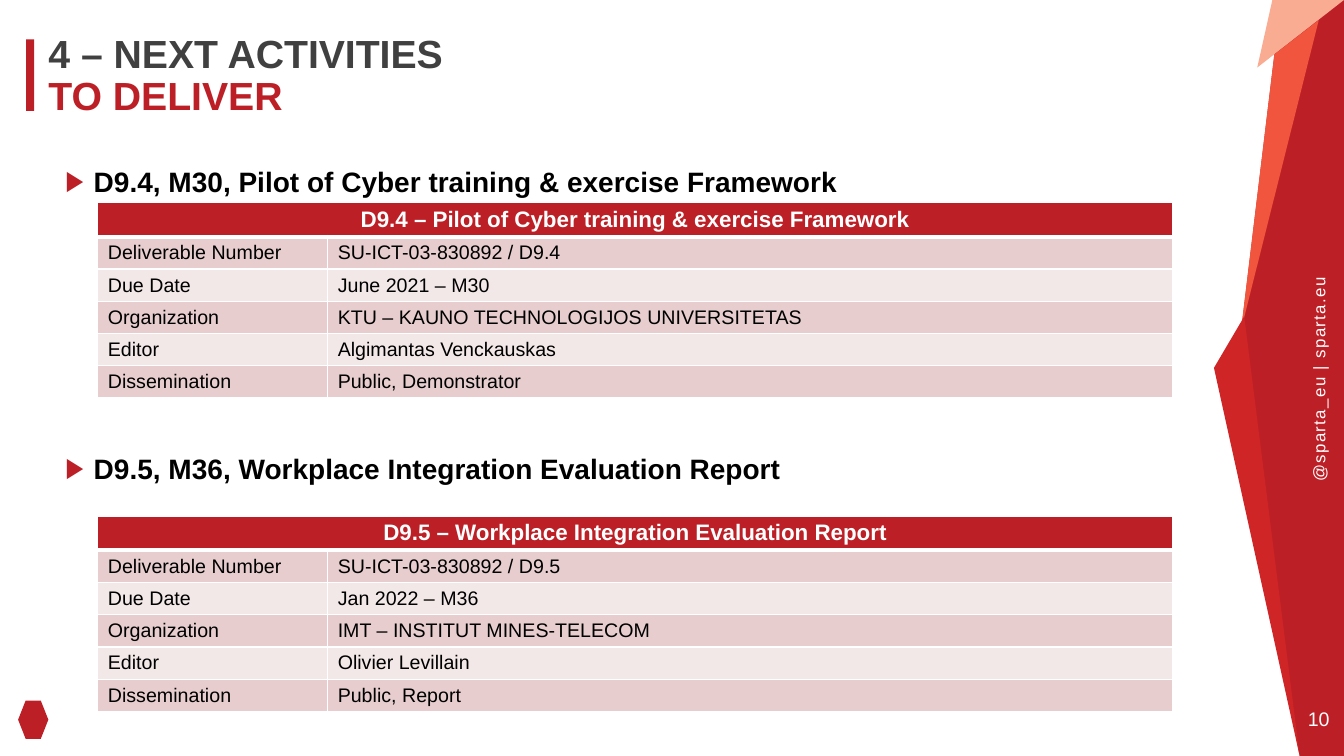
from lxml import etree
from pptx import Presentation
from pptx.enum import shapes as s, text as t
from pptx.dml.color import RGBColor
from pptx.oxml import ns
from pptx.util import Inches, Pt

HUES = {"red": "BC2026", "peach": "F9AC91", "coral": "F1553D", "scarlet": "D02527",
        "white": "FFFFFF", "black": "000000", "gray": "404040",
        "band": "E7CDCD", "pale": "F3E8E8"}
FACETS = [
    ("red", [(13.33, 0), (13.33, 7.5), (12.89, 7.5), (12.23, 3.94), (12.64, 0.54), (12.76, 0)]),
    ("peach", [(13.33, 0), (12.47, 0.67), (12.62, 0)]),
    ("coral", [(13.08, 0.2), (12.31, 3.27), (12.64, 0.54)]),
    ("scarlet", [(12.34, 3.14), (12.89, 7.5), (12.04, 3.65)]),
]
LABELS = ["Deliverable Number", "Due Date", "Organization", "Editor", "Dissemination"]
REPORTS = [
    (1.63, "D9.4, M30, Pilot of Cyber training & exercise Framework",
     2.01, "D9.4 – Pilot of Cyber training & exercise Framework",
     ["SU-ICT-03-830892 / D9.4", "June 2021 – M30", "KTU – KAUNO TECHNOLOGIJOS UNIVERSITETAS",
      "Algimantas Venckauskas", "Public, Demonstrator"]),
    (4.48, "D9.5, M36, Workplace Integration Evaluation Report",
     5.12, "D9.5 – Workplace Integration Evaluation Report",
     ["SU-ICT-03-830892 / D9.5", "Jan 2022 – M36", "IMT – INSTITUT MINES-TELECOM",
      "Olivier Levillain", "Public, Report"]),
]


def tint(name):
    """Return the named colour."""
    return RGBColor.from_string(HUES[name])


def apply(item, **props):
    """Set each given attribute on an item."""
    for key, value in props.items():
        setattr(item, key, value)


def style(font, size, hue, bold=False):
    """Format a font."""
    apply(font, name="Arial", size=Pt(size), bold=bold)
    font.color.rgb = tint(hue)


def paint(shape, hue):
    """Give a shape a plain fill with no line or shadow."""
    shape.shadow.inherit = False
    shape.fill.solid()
    shape.fill.fore_color.rgb = tint(hue)
    shape.line.fill.background()


def facet(slide, hue, points):
    """Draw one filled polygon."""
    spots = [(Inches(x), Inches(y)) for x, y in points]
    pen = slide.shapes.build_freeform(*spots[0])
    pen.add_line_segments(spots[1:], close=True)
    paint(pen.convert_to_shape(), hue)


def block(slide, kind, place):
    """Draw one red preset shape."""
    paint(slide.shapes.add_shape(kind, *map(Inches, place)), "red")


def fit(frame, wrap, anchor):
    """Remove the insets of a text frame and set its flow."""
    apply(frame, margin_left=0, margin_right=0, margin_top=0, margin_bottom=0,
          word_wrap=wrap, auto_size=t.MSO_AUTO_SIZE.NONE, vertical_anchor=anchor)


def label(slide, place, words, size, hue, bold=False, wrap=False, anchor=t.MSO_ANCHOR.MIDDLE):
    """Add a one-paragraph text box and return it."""
    box = slide.shapes.add_textbox(*map(Inches, place))
    fit(box.text_frame, wrap, anchor)
    run = box.text_frame.paragraphs[0].add_run()
    run.text = words
    style(run.font, size, hue, bold)
    return box


def heading(slide, top, words):
    """Add a heading with a red arrow bullet."""
    box = label(slide, (0.65, top, 11.34, 0.4), words, 20, "black", True, True, t.MSO_ANCHOR.TOP)
    props = box.text_frame.paragraphs[0]._p.get_or_add_pPr()
    props.set("marL", str(Inches(0.28)))
    props.set("indent", str(Inches(-0.28)))
    shade = etree.SubElement(props, ns.qn("a:buClr"))
    etree.SubElement(shade, ns.qn("a:srgbClr"), val=HUES["red"])
    etree.SubElement(props, ns.qn("a:buFont"), typeface="Arial")
    etree.SubElement(props, ns.qn("a:buChar"), char="▶")


def border(cell, base):
    """Draw white borders round a cell, with the given base width."""
    props = cell._tc.get_or_add_tcPr()
    for side, width in {"L": 1, "R": 1, "T": 1, "B": base}.items():
        line = etree.SubElement(props, ns.qn(f"a:ln{side}"), w=str(Pt(width)))
        fill = etree.SubElement(line, ns.qn("a:solidFill"))
        etree.SubElement(fill, ns.qn("a:srgbClr"), val=HUES["white"])


def fill(cell, words, hue, size, ink, bold=False, align=t.PP_ALIGN.LEFT, base=1):
    """Write and format one table cell."""
    border(cell, base)
    apply(cell, text=words, vertical_anchor=t.MSO_ANCHOR.MIDDLE,
          margin_top=Inches(0.03), margin_bottom=Inches(0.03))
    cell.fill.solid()
    cell.fill.fore_color.rgb = tint(hue)
    line = cell.text_frame.paragraphs[0]
    line.alignment = align
    style(line.font, size, ink, bold)


def report(slide, top, title, values):
    """Add the table for one deliverable."""
    count = len(values) + 1
    place = map(Inches, (0.97, top, 10.66, 0.32 * count))
    grid = slide.shapes.add_table(count, 2, *place).table
    grid.rows[0].height = Inches(0.34)
    for col, width in zip(grid.columns, (2.28, 8.38)):
        col.width = Inches(width)
    grid.cell(0, 0).merge(grid.cell(0, 1))
    for col, words in enumerate((title, "")):
        fill(grid.cell(0, col), words, "red", 16, "white", True, t.PP_ALIGN.CENTER, 3)
    for row, pair in enumerate(zip(LABELS, values), 1):
        for col, words in enumerate(pair):
            fill(grid.cell(row, col), words, "band" if row % 2 else "pale", 14, "black")


def header(slide):
    """Format the two-line title and draw the bar beside it."""
    block(slide, s.MSO_SHAPE.RECTANGLE, (0.26, 0.39, 0.08, 0.71))
    title = slide.shapes.title
    apply(title, left=Inches(0.48), top=Inches(0.34), width=Inches(11.34), height=Inches(0.87))
    fit(title.text_frame, True, t.MSO_ANCHOR.TOP)
    line = title.text_frame.paragraphs[0]
    apply(line, alignment=t.PP_ALIGN.LEFT, line_spacing=0.9)
    for words, hue in (("4 – NEXT ACTIVITIES", "gray"), ("TO DELIVER", "red")):
        if line.runs:
            line.add_line_break()
        run = line.add_run()
        run.text = words
        style(run.font, 28, hue, True)


def main():
    """Build and save the slide."""
    deck = Presentation()
    apply(deck, slide_width=Inches(13.33), slide_height=Inches(7.5))
    slide = deck.slides.add_slide(deck.slide_layouts[5])
    for hue, points in FACETS:
        facet(slide, hue, points)
    site = label(slide, (12.05, 3.65, 2.06, 0.2), "@sparta_eu | sparta.eu", 12, "white")
    site.rotation = 270
    site.text_frame.paragraphs[0].runs[0].font._element.set("spc", "100")
    page = label(slide, (12.96, 7.01, 0.24, 0.24), "10", 14, "white")
    page.text_frame.paragraphs[0].alignment = t.PP_ALIGN.CENTER
    block(slide, s.MSO_SHAPE.HEXAGON, (0.18, 6.95, 0.3, 0.38))
    header(slide)
    for top, words, below, title, values in REPORTS:
        heading(slide, top, words)
        report(slide, below, title, values)
    deck.save("out.pptx")


if __name__ == "__main__":
    main()
